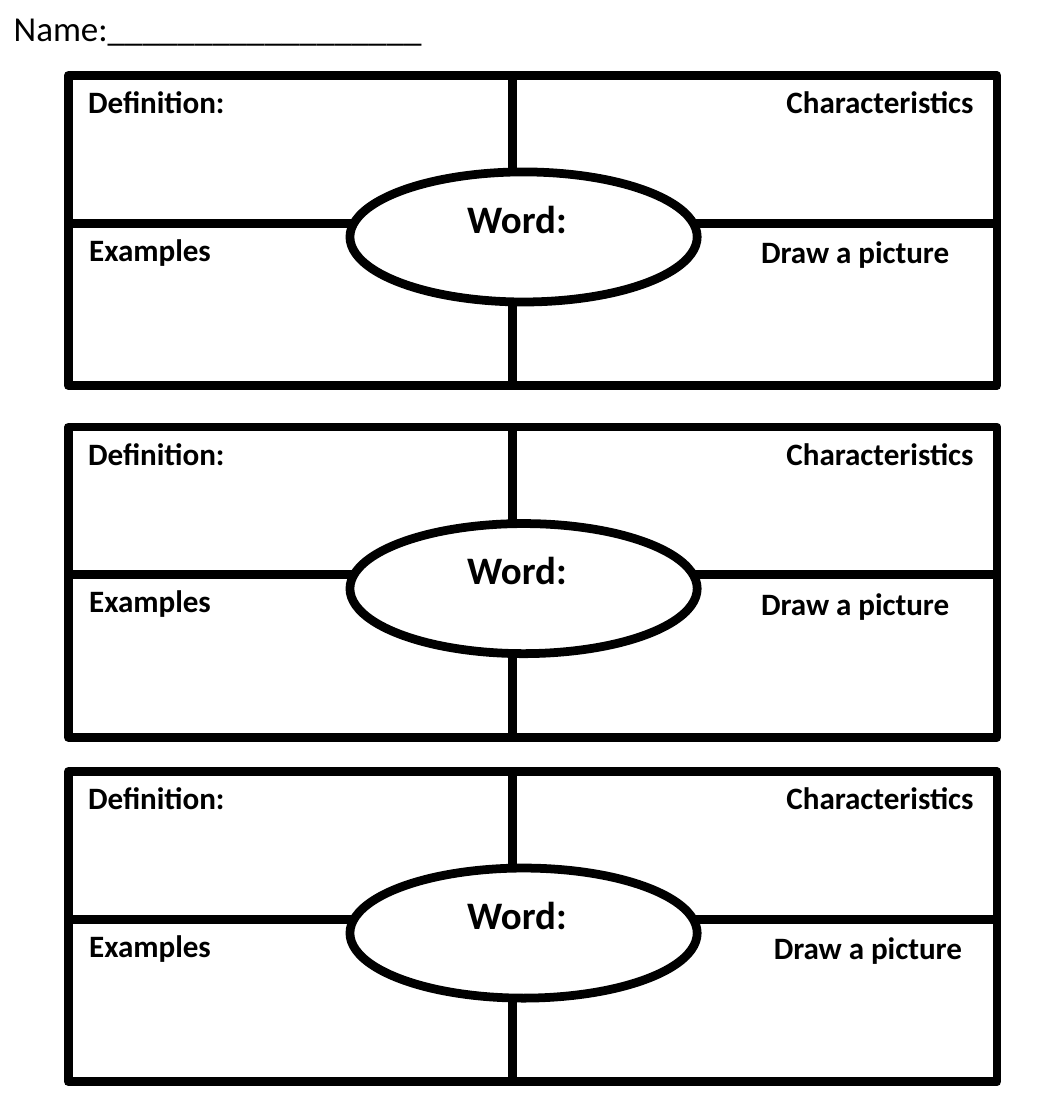
from dataclasses import dataclass

from pptx import Presentation
from pptx.dml.color import RGBColor
from pptx.enum.shapes import MSO_SHAPE
from pptx.enum.text import MSO_AUTO_SIZE, PP_ALIGN
from pptx.util import Cm, Pt

RECTANGLE = MSO_SHAPE.RECTANGLE
OVAL = MSO_SHAPE.OVAL
GROW = MSO_AUTO_SIZE.SHAPE_TO_FIT_TEXT
LEFT = PP_ALIGN.LEFT
CENTER = PP_ALIGN.CENTER


@dataclass(frozen=True)
class Theme:
    ink: RGBColor = RGBColor(0, 0, 0)
    paper: RGBColor = RGBColor(255, 255, 255)
    font: str = "Calibri"
    label_size: Pt = Pt(16)
    name_size: Pt = Pt(18)
    word_size: Pt = Pt(20)
    outline: Pt = Pt(4.5)


theme = Theme()

presentation = Presentation()
presentation.slide_width = Cm(19.05)
presentation.slide_height = Cm(20.32)
slide = presentation.slides.add_slide(presentation.slide_layouts[6])


def add_outline(kind, left, top, width, height):
    shape = slide.shapes.add_shape(kind, Cm(left), Cm(top), Cm(width), Cm(height))
    shape.shadow.inherit = False
    shape.fill.solid()
    shape.fill.fore_color.rgb = theme.paper
    shape.line.color.rgb = theme.ink
    shape.line.width = theme.outline


def add_label(text, left, top, width, height, size, bold=True, alignment=LEFT):
    box = slide.shapes.add_textbox(Cm(left), Cm(top), Cm(width), Cm(height))
    frame = box.text_frame
    frame.word_wrap = True
    frame.auto_size = GROW
    paragraph = frame.paragraphs[0]
    paragraph.alignment = alignment
    run = paragraph.add_run()
    run.text = text
    run.font.name = theme.font
    run.font.size = size
    run.font.bold = bold
    run.font.color.rgb = theme.ink


CARD_TOPS = (1.37, 7.75, 14)
PICTURE_LABELS = ((13.56, 4.34), (13.56, 4.34), (13.79, 4.11))
COLUMNS = (1.24, 9.3)
ROW_STEP = 2.68

for card_top, (picture_left, picture_width) in zip(CARD_TOPS, PICTURE_LABELS):
    for row in range(2):
        for column_left in COLUMNS:
            add_outline(RECTANGLE, column_left, card_top + row * ROW_STEP, 8.79, 2.95)
    add_outline(OVAL, 6.35, card_top + 1.75, 6.3, 2.36)

    lower_top = card_top + ROW_STEP
    for text, left, top, width, height in (
        ("Definition:", 1.35, card_top, 6.4, 0.94),
        ("Characteristics", 14.02, card_top, 4.11, 0.94),
        ("Examples", 1.37, lower_top, 5, 0.94),
        ("Draw a picture", picture_left, lower_top + 0.04, picture_width, 1.63),
    ):
        add_label(text, left, top, width, height, theme.label_size)
    add_label("Word:", 7.87, card_top + 2.03, 3.02, 1.12, theme.word_size, alignment=CENTER)

add_label("Name:__________________", 0, 0, 8.69, 1.02, theme.name_size, bold=False)

presentation.save("out.pptx")
